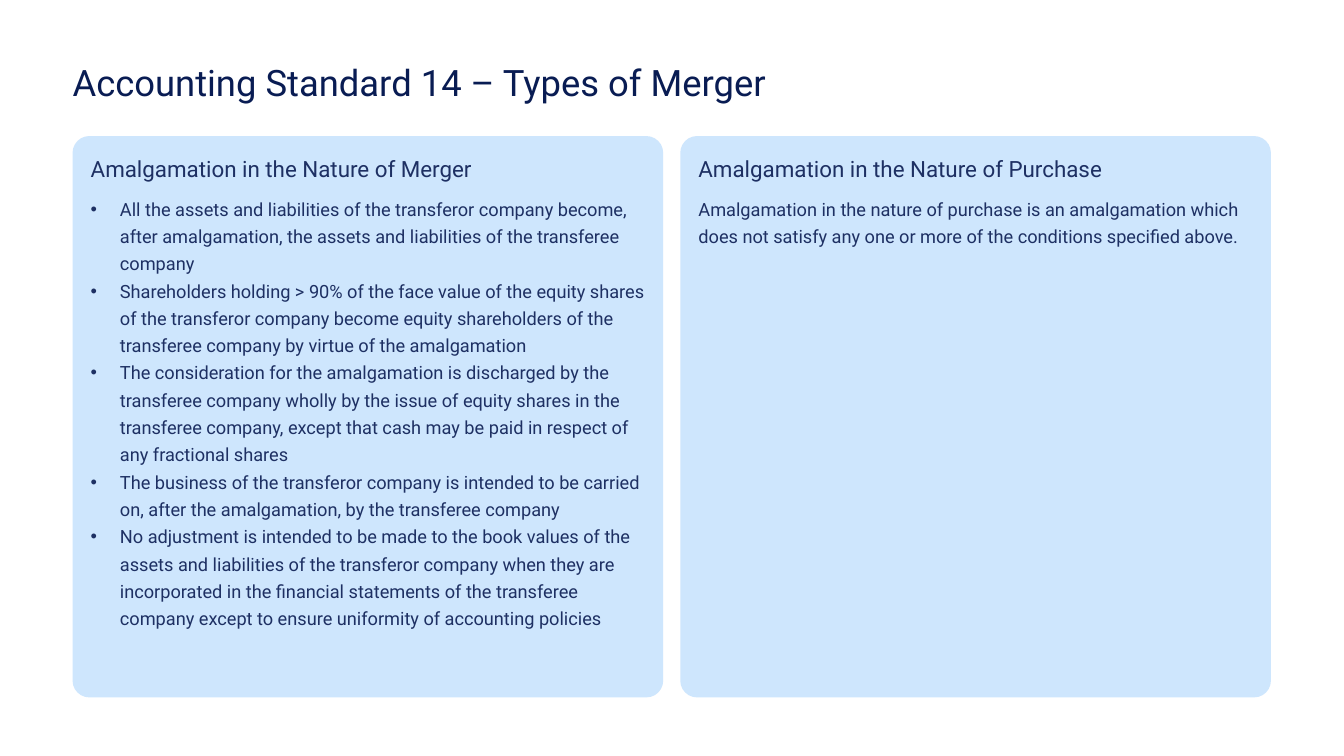
from lxml.etree import SubElement
from pptx import Presentation
from pptx.dml.color import RGBColor
from pptx.enum.shapes import MSO_SHAPE as Shape
from pptx.oxml.ns import qn
from pptx.util import Pt

COLOURS = {"background": "FFFFFF", "title": "091C53", "text": "1E3063", "panel": "CEE6FD"}
PANEL_LEFT, PANEL_TOP = 51.84, 97.2
PANEL_WIDTH, PANEL_HEIGHT = 421.9, 401
PANEL_PITCH = 434.1
PADDING = 13
INDENT = 20.88

PANELS = [
    ("Amalgamation in the Nature of Merger", True, [
        "All the assets and liabilities of the transferor company become, after amalgamation, "
        "the assets and liabilities of the transferee company",
        "Shareholders holding > 90% of the face value of the equity shares of the transferor company "
        "become equity shareholders of the transferee company by virtue of the amalgamation",
        "The consideration for the amalgamation is discharged by the transferee company wholly by the "
        "issue of equity shares in the transferee company, except that cash may be paid in respect of "
        "any fractional shares",
        "The business of the transferor company is intended to be carried on, after the amalgamation, "
        "by the transferee company",
        "No adjustment is intended to be made to the book values of the assets and liabilities of the "
        "transferor company when they are incorporated in the financial statements of the transferee "
        "company except to ensure uniformity of accounting policies",
    ]),
    ("Amalgamation in the Nature of Purchase", False, [
        "Amalgamation in the nature of purchase is an amalgamation which does not satisfy any one or "
        "more of the conditions specified above.",
    ]),
]


class SlideBuilder:
    font = "Roboto"

    def __init__(self, slide):
        self.slide = slide

    def colour(self, name):
        return RGBColor.from_string(COLOURS[name])

    def background(self):
        fill = self.slide.background.fill
        fill.solid()
        fill.fore_color.rgb = self.colour("background")

    def panel(self, left, top, width, height):
        shape = self.slide.shapes.add_shape(
            Shape.ROUNDED_RECTANGLE, Pt(left), Pt(top), Pt(width), Pt(height))
        shape.adjustments[0] = 0.03
        shape.shadow.inherit = False
        shape.fill.solid()
        shape.fill.fore_color.rgb = self.colour("panel")
        shape.line.fill.background()

    def text(self, left, top, width, height, lines, size, colour="text",
             spacing=1.04, wrap=False, bullets=False):
        box = self.slide.shapes.add_textbox(Pt(left), Pt(top), Pt(width), Pt(height))
        frame = box.text_frame
        frame.margin_left = frame.margin_right = frame.margin_top = frame.margin_bottom = 0
        frame.word_wrap = wrap
        frame.text = "\n".join(lines)
        for paragraph in frame.paragraphs:
            paragraph.line_spacing = spacing
            if bullets:
                self.bullet(paragraph)
            for run in paragraph.runs:
                run.font.name = self.font
                run.font.size = Pt(size)
                run.font.color.rgb = self.colour(colour)

    def bullet(self, paragraph):
        properties = paragraph._p.get_or_add_pPr()
        properties.set("marL", str(Pt(INDENT)))
        properties.set("indent", str(-Pt(INDENT)))
        SubElement(properties, qn("a:buFont"), typeface="Arial")
        SubElement(properties, qn("a:buChar"), char="•")


def main():
    presentation = Presentation()
    presentation.slide_width, presentation.slide_height = Pt(960), Pt(540)
    builder = SlideBuilder(presentation.slides.add_slide(presentation.slide_layouts[6]))
    builder.background()
    builder.text(PANEL_LEFT, 41.8, 563.8, 32.4,
                 ["Accounting Standard 14 – Types of Merger"], 26, "title")

    text_width = PANEL_WIDTH - 2 * PADDING
    for column, (heading, bullets, lines) in enumerate(PANELS):
        left = PANEL_LEFT + column * PANEL_PITCH
        builder.panel(left, PANEL_TOP, PANEL_WIDTH, PANEL_HEIGHT)
        builder.text(left + PADDING, PANEL_TOP + PADDING, text_width, 20, [heading], 16)
        builder.text(left + PADDING, 137.5, text_width, 348 if bullets else 58, lines, 13,
                     spacing=1.25, wrap=True, bullets=bullets)

    presentation.save("out.pptx")


if __name__ == "__main__":
    main()
